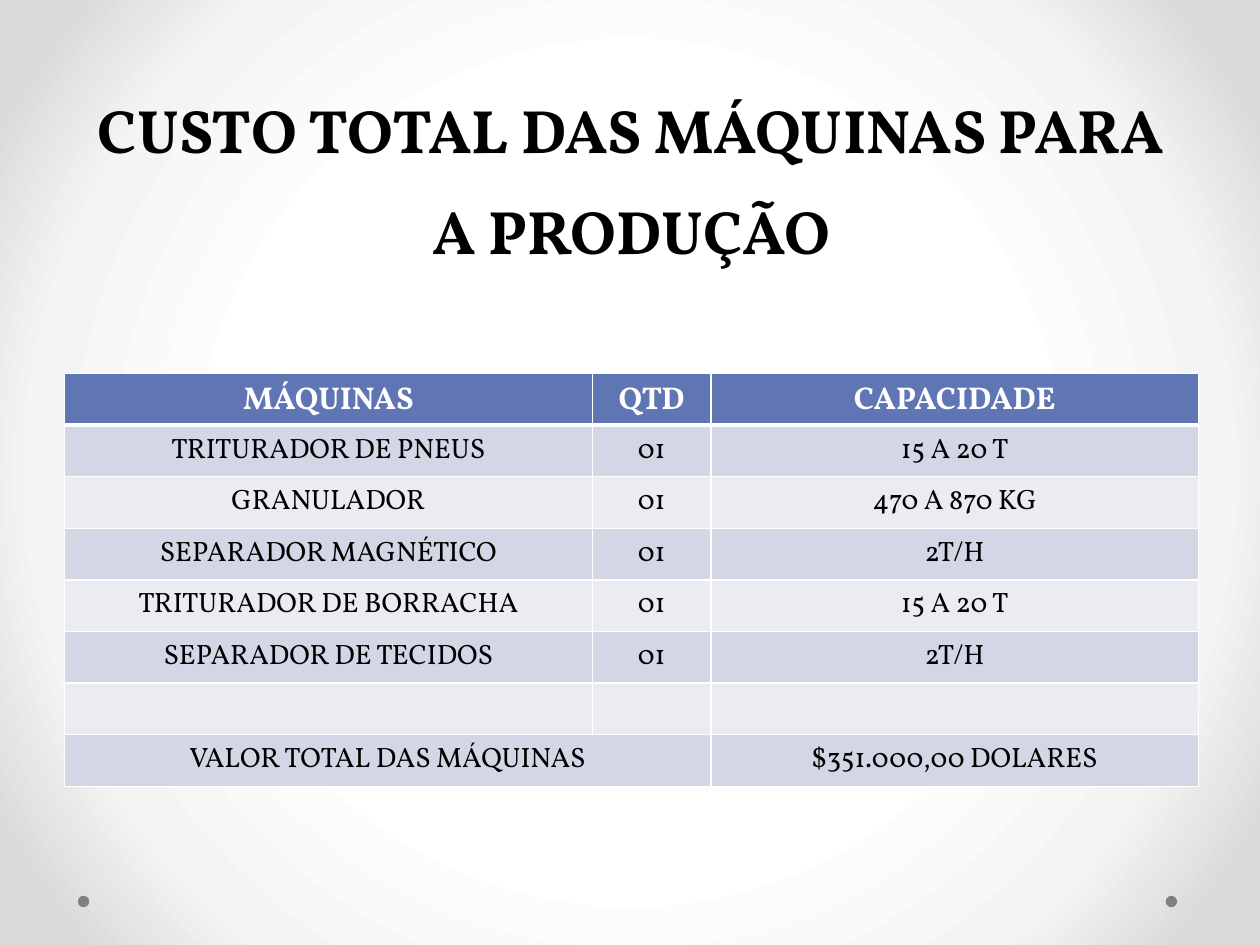
from lxml import etree
from pptx import Presentation
from pptx.dml.color import RGBColor
from pptx.enum.shapes import MSO_SHAPE
from pptx.enum.text import MSO_ANCHOR, PP_ALIGN
from pptx.oxml import parse_xml
from pptx.oxml.ns import nsdecls, qn
from pptx.util import Cm, Pt

OVAL = MSO_SHAPE.OVAL
BOTTOM = MSO_ANCHOR.BOTTOM
CENTER = PP_ALIGN.CENTER

BLACK = RGBColor(0x00, 0x00, 0x00)
WHITE = RGBColor(0xFF, 0xFF, 0xFF)
GRAY = RGBColor(0x80, 0x80, 0x80)
BLUE = RGBColor(0x60, 0x76, 0xB4)
BANDS = (RGBColor(0xEA, 0xEC, 0xF2), RGBColor(0xD2, 0xD6, 0xE5))
STOPS = ((50, WHITE), (76, RGBColor(0xF4, 0xF4, 0xF4)),
         (92, RGBColor(0xDA, 0xDA, 0xDA)))

FONT = "Vollkorn"
TITLE = {"name": FONT, "size": Pt(35), "bold": True}
HEAD = {"name": FONT, "size": Pt(18), "bold": True}
BODY = {"name": FONT, "size": Pt(16), "bold": False}

LEFT = Cm(1.3)
WIDTHS = (Cm(10.64), Cm(2.39), Cm(9.83))
ROW = Cm(1.04)
ROWS = (
    ("MÁQUINAS", "QTD", "CAPACIDADE"),
    ("TRITURADOR DE PNEUS", "01", "15 A 20 T"),
    ("GRANULADOR", "01", "470 A 870 KG"),
    ("SEPARADOR MAGNÉTICO", "01", "2T/H"),
    ("TRITURADOR DE BORRACHA", "01", "15 A 20 T"),
    ("SEPARADOR DE TECIDOS", "01", "2T/H"),
    ("", "", ""),
    ("VALOR TOTAL DAS MÁQUINAS", "", "$351.000,00 DOLARES"),
)


def set_back(slide):
    """Fill the background with a circular gradient."""
    slide.background.fill.gradient()
    grad = slide.element.find(".//" + qn("a:gradFill"))
    stops = "".join(
        f'<a:gs pos="{pos * 1000}"><a:srgbClr val="{color}"/></a:gs>'
        for pos, color in STOPS)
    grad.getparent().replace(grad, parse_xml(
        f'<a:gradFill {nsdecls("a")} rotWithShape="1">'
        f'<a:gsLst>{stops}</a:gsLst><a:path path="circle">'
        '<a:fillToRect l="50000" t="50000" r="50000" b="50000"/>'
        '</a:path></a:gradFill>'))


def add_dot(slide, left):
    dot = slide.shapes.add_shape(OVAL, left, Cm(18.06), Cm(0.23), Cm(0.23))
    dot.shadow.inherit = False
    dot.fill.solid()
    dot.fill.fore_color.rgb = GRAY
    dot.line.fill.background()


def put_text(frame, text, style, color):
    para = frame.paragraphs[0]
    para.alignment = CENTER
    run = para.add_run()
    run.text = text
    for key, value in style.items():
        setattr(run.font, key, value)
    run.font.color.rgb = color
    return para


def add_title(slide, text):
    box = slide.shapes.add_textbox(LEFT, Cm(1.52), sum(WIDTHS), Cm(3.99))
    frame = box.text_frame
    frame.word_wrap = True
    frame.vertical_anchor = BOTTOM
    put_text(frame, text, TITLE, BLACK).line_spacing = Pt(58)


def set_lines(cell, top, base):
    """Draw white borders; top and base are widths in points."""
    props = cell._tc.get_or_add_tcPr()
    for side, width in (("L", 1), ("R", 1), ("T", top), ("B", base)):
        line = etree.SubElement(props, qn("a:ln" + side), w=str(Pt(width)))
        fill = etree.SubElement(line, qn("a:solidFill"))
        etree.SubElement(fill, qn("a:srgbClr"), val=str(WHITE))


def add_grid(slide):
    table = slide.shapes.add_table(
        len(ROWS), len(WIDTHS), LEFT, Cm(7.53),
        sum(WIDTHS), ROW * len(ROWS)).table
    table.horz_banding = False
    for column, width in zip(table.columns, WIDTHS):
        column.width = width
    for i, texts in enumerate(ROWS):
        table.rows[i].height = ROW
        style, color, shade = (
            (BODY, BLACK, BANDS[i % 2]) if i else (HEAD, WHITE, BLUE))
        for j, text in enumerate(texts):
            cell = table.cell(i, j)
            # The rule below the header is thicker
            set_lines(cell, 3 if i == 1 else 1, 3 if i == 0 else 1)
            cell.fill.solid()
            cell.fill.fore_color.rgb = shade
            if text:
                put_text(cell.text_frame, text, style, color)
    # The total label spans two columns
    last = len(ROWS) - 1
    table.cell(last, 0).merge(table.cell(last, 1))


def main():
    deck = Presentation()
    deck.slide_width, deck.slide_height = Cm(25.4), Cm(19.05)
    slide = deck.slides.add_slide(deck.slide_layouts[6])

    # Background and corner dots
    set_back(slide)
    for left in (Cm(23.5), Cm(1.57)):
        add_dot(slide, left)

    # Title and cost table
    add_title(slide, "CUSTO TOTAL DAS MÁQUINAS PARA A PRODUÇÃO")
    add_grid(slide)
    deck.save("out.pptx")


if __name__ == "__main__":
    main()
